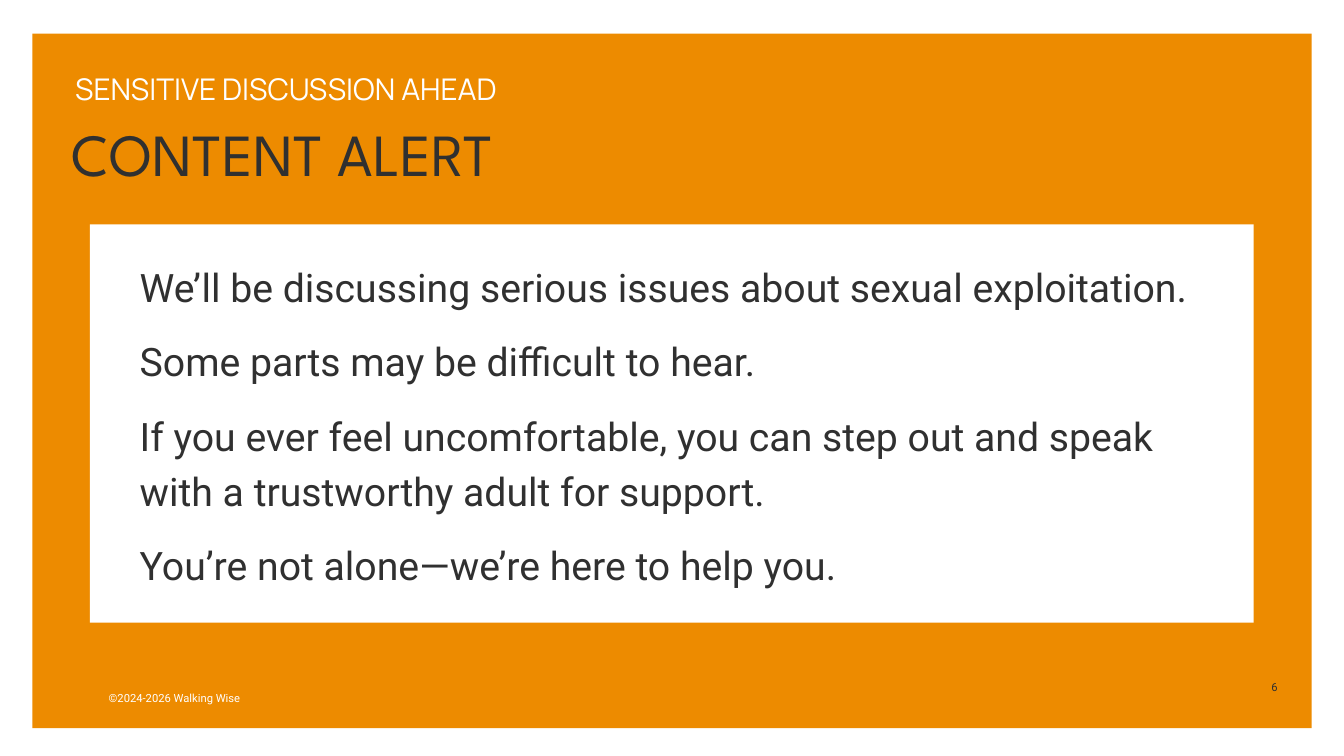
from collections import namedtuple

from pptx import Presentation
from pptx.dml.color import RGBColor
from pptx.enum.shapes import MSO_SHAPE as Shape
from pptx.enum.text import MSO_ANCHOR as Anchor, PP_ALIGN as Align
from pptx.util import Cm, Pt

ORANGE, WHITE, CHARCOAL = "ED8B00", "FFFFFF", "303030"
LINE_RATIO = 1.4

Box = namedtuple("Box", "left top width height")

MESSAGES = [
    "We’ll be discussing serious issues about sexual exploitation.",
    "Some parts may be difficult to hear.",
    "If you ever feel uncomfortable, you can step out and speak "
    "with a trustworthy adult for support.",
    "You’re not alone—we’re here to help you.",
]


def color(hex_string):
    return RGBColor.from_string(hex_string)


def inside(box, left, top, width, height):
    """Return a box whose corner is measured from the corner of another."""
    return Box(box.left + left, box.top + top, width, height)


def add_panel(page, box, fill):
    panel = page.shapes.add_shape(Shape.RECTANGLE, *map(Cm, box))
    panel.shadow.inherit = False
    panel.fill.solid()
    panel.fill.fore_color.rgb = color(fill)
    panel.line.fill.background()


def add_text(page, box, *lines, size=12, font="Roboto", fill=CHARCOAL,
             align=Align.LEFT, gap=0, wrap=True):
    frame = page.shapes.add_textbox(*map(Cm, box)).text_frame
    frame.word_wrap = wrap
    frame.vertical_anchor = Anchor.TOP
    frame.margin_left = frame.margin_top = 0
    frame.margin_right = frame.margin_bottom = 0
    for index, line in enumerate(lines):
        para = frame.add_paragraph() if index else frame.paragraphs[0]
        para.alignment = align
        para.line_spacing = Pt(size * LINE_RATIO)
        if index:
            para.space_before = Pt(gap)
        span = para.add_run()
        span.text = line
        span.font.name = font
        span.font.size = Pt(size)
        span.font.color.rgb = color(fill)


def add_heading(page, box):
    add_text(page, inside(box, 1.5, 2.69, 25.4, 3.05), "CONTENT ALERT",
             size=64, font="League Spartan")
    add_text(page, inside(box, 1.62, 1.19, 40.41, 1.52),
             "SENSITIVE DISCUSSION AHEAD",
             size=32, font="Manrope", fill=WHITE)


def add_message_card(page, box):
    add_panel(page, box, WHITE)
    add_text(page, inside(box, 1.88, 1.17, 41.4, 12.47), *MESSAGES,
             size=42, gap=21)


def add_footer(page, box):
    add_text(page, inside(box, 46.74, 24.36, 0.43, 0.51), "6",
             align=Align.CENTER, wrap=False)
    add_text(page, inside(box, 2.89, 24.77, 6.55, 0.58),
             "©2024-2026 Walking Wise", fill=WHITE)


def main():
    deck = Presentation()
    deck.slide_width, deck.slide_height = Cm(50.8), Cm(28.58)
    page = deck.slides.add_slide(deck.slide_layouts[6])
    backdrop = Box(1.22, 1.27, 48.36, 26.26)
    add_panel(page, backdrop, ORANGE)
    add_message_card(page, inside(backdrop, 2.18, 7.21, 43.99, 15.06))
    add_heading(page, backdrop)
    add_footer(page, backdrop)
    deck.save("out.pptx")


if __name__ == "__main__":
    main()
